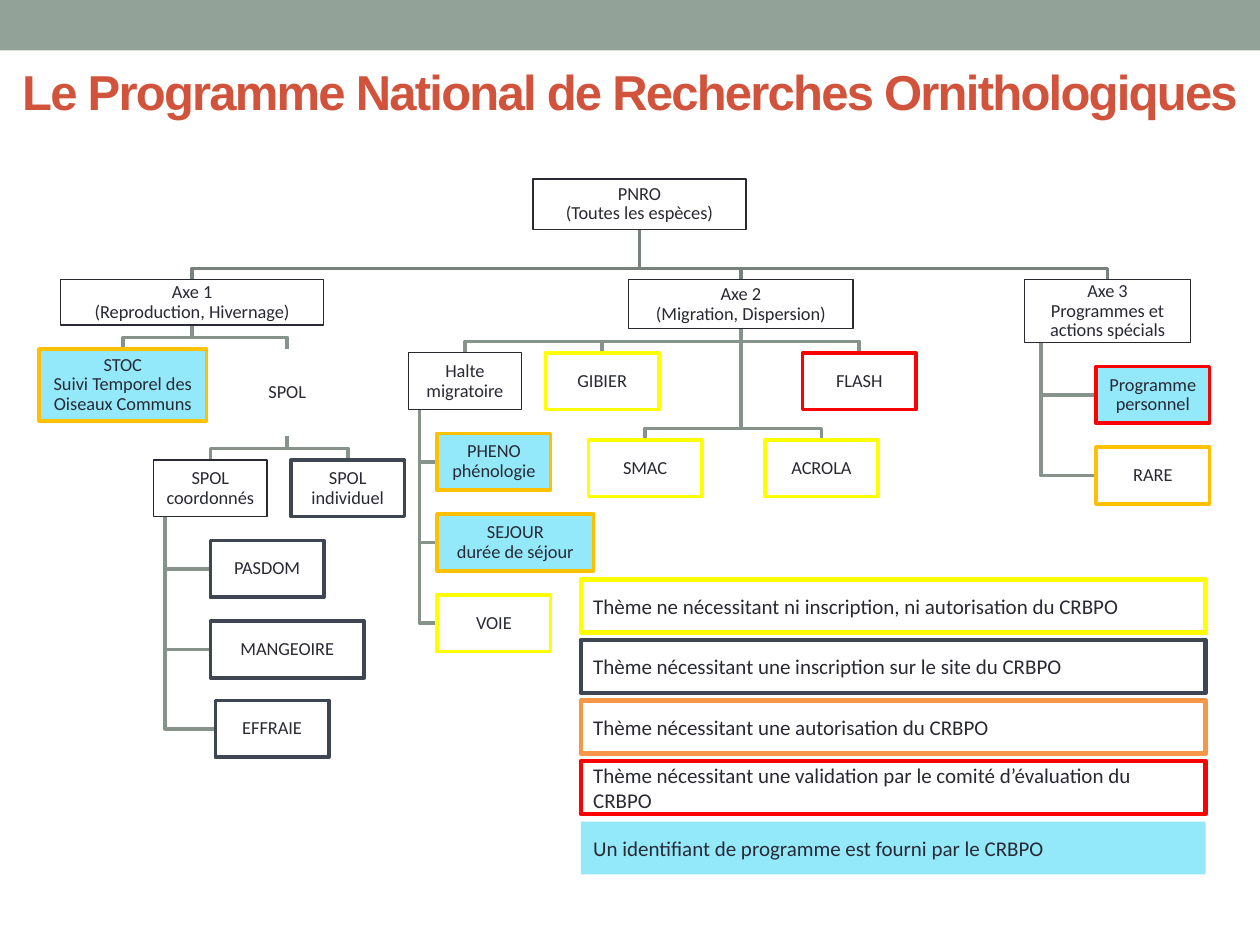
from collections import namedtuple

from lxml import etree
from pptx import Presentation
from pptx.dml.color import RGBColor
from pptx.enum.shapes import MSO_SHAPE
from pptx.enum.text import MSO_ANCHOR, PP_ALIGN
from pptx.oxml.ns import qn
from pptx.util import Inches, Pt

RECT = MSO_SHAPE.RECTANGLE
MIDDLE = MSO_ANCHOR.MIDDLE
CENTER, LEFT = PP_ALIGN.CENTER, PP_ALIGN.LEFT

SAGE = RGBColor(0x93, 0xA2, 0x99)
BRICK = RGBColor(0xD2, 0x53, 0x3C)
INK = RGBColor(0x29, 0x29, 0x34)
SLATE = RGBColor(0x3E, 0x46, 0x52)
YELLOW = RGBColor(0xFF, 0xFF, 0x00)
AMBER = RGBColor(0xFF, 0xC0, 0x00)
ORANGE = RGBColor(0xF7, 0x96, 0x46)
RED = RGBColor(0xFF, 0x00, 0x00)
CYAN = RGBColor(0x6F, 0xE2, 0xF9)
ROOT_LINK = RGBColor(0x76, 0x82, 0x7B)
LINK = RGBColor(0x85, 0x93, 0x8B)

Node = namedtuple("Node", "text x y w h line fill", defaults=(0.9, 0.45, INK, None))

# Positions in inches from the top left corner of the tree
NODES = {
    "pnro": Node("PNRO\n(Toutes les espèces)", 4.23, 0, 1.69, 0.4),
    "axe1": Node("Axe 1\n(Reproduction, Hivernage)", 0.48, 0.8, 2.09, 0.36),
    "stoc": Node("STOC\nSuivi Temporel des Oiseaux Communs", 0.31, 1.35, 1.33, 0.57,
                 AMBER, CYAN),
    "spol": Node("SPOL", 1.83, 1.35, h=0.69, line=None),
    "coordonnes": Node("SPOL coordonnés", 1.22, 2.23),
    "pasdom": Node("PASDOM", 1.67, 2.87, line=SLATE),
    "mangeoire": Node("MANGEOIRE", 1.67, 3.51, 1.22, line=SLATE),
    "effraie": Node("EFFRAIE", 1.71, 4.14, line=SLATE),
    "individuel": Node("SPOL individuel", 2.31, 2.23, line=SLATE),
    "axe2": Node("Axe 2\n(Migration, Dispersion)", 4.99, 0.8, 1.78, 0.39),
    "halte": Node("Halte migratoire", 3.24, 1.38),
    "pheno": Node("PHENO\nphénologie", 3.47, 2.02, line=AMBER, fill=CYAN),
    "sejour": Node("SEJOUR\ndurée de séjour", 3.47, 2.66, 1.24, line=AMBER, fill=CYAN),
    "voie": Node("VOIE", 3.47, 3.3, line=YELLOW),
    "gibier": Node("GIBIER", 4.33, 1.38, line=YELLOW),
    "smac": Node("SMAC", 4.67, 2.07, line=YELLOW),
    "flash": Node("FLASH", 6.37, 1.38, line=RED),
    "acrola": Node("ACROLA", 6.07, 2.07, line=YELLOW),
    "axe3": Node("Axe 3\nProgrammes et actions spécials", 8.13, 0.8, 1.32, 0.5),
    "personnel": Node("Programme personnel", 8.7, 1.49, line=RED, fill=CYAN),
    "rare": Node("RARE", 8.7, 2.13, line=AMBER),
}
DROP_LINKS = {
    "axe1": ["stoc", "spol"],
    "spol": ["coordonnes", "individuel"],
    "axe2": ["halte", "gibier", "smac", "acrola", "flash"],
    "pnro": ["axe1", "axe2", "axe3"],
}
SIDE_LINKS = {
    "coordonnes": ["pasdom", "mangeoire", "effraie"],
    "halte": ["pheno", "sejour", "voie"],
    "axe3": ["personnel", "rare"],
}
LEGEND = [
    ("Thème ne nécessitant ni inscription, ni autorisation du CRBPO", YELLOW, None),
    ("Thème nécessitant une inscription sur le site du CRBPO", SLATE, None),
    ("Thème nécessitant une autorisation du CRBPO", ORANGE, None),
    ("Thème nécessitant une validation par le comité d’évaluation du CRBPO", RED, None),
    ("Un identifiant de programme est fourni par le CRBPO", None, CYAN),
]


def add_box(slide, x, y, w, h, line=None, weight=0.75, fill=None, alpha=100):
    sp = slide.shapes.add_shape(RECT, Inches(x), Inches(y), Inches(w), Inches(h))
    sp.shadow.inherit = False
    if fill is None:
        sp.fill.background()
    else:
        sp.fill.solid()
        sp.fill.fore_color.rgb = fill
        if alpha < 100:
            color = sp.fill._xPr.find(qn("a:solidFill"))[0]
            etree.SubElement(color, qn("a:alpha")).set("val", str(alpha * 1000))
    if line is None:
        sp.line.fill.background()
    else:
        sp.line.color.rgb = line
        sp.line.width = Pt(weight)
    return sp


def write(sp, text, size, align, inset_x, inset_y):
    tf = sp.text_frame
    tf.word_wrap = True
    tf.vertical_anchor = MIDDLE
    tf.margin_left = tf.margin_right = Inches(inset_x)
    tf.margin_top = tf.margin_bottom = Inches(inset_y)
    p = tf.paragraphs[0]
    p.alignment = align
    for i, part in enumerate(text.split("\n")):
        if i:
            p.add_line_break()
        r = p.add_run()
        r.text = part
        r.font.name = "Calibri"
        r.font.size = Pt(size)
        r.font.color.rgb = INK
    return p


def add_link(slide, points, color):
    points = [(Inches(x), Inches(y)) for x, y in points]
    builder = slide.shapes.build_freeform(*points[0])
    builder.add_line_segments(points[1:], close=False)
    sp = builder.convert_to_shape()
    sp.shadow.inherit = False
    sp.fill.background()
    sp.line.color.rgb = color
    sp.line.width = Pt(2.08)


def add_header(slide, x, y, w):
    add_box(slide, x, y, w, 0.4, fill=SAGE)
    title = slide.shapes.title
    title.left, title.top = Inches(x), Inches(y + 0.3)
    title.width, title.height = Inches(w), Inches(0.85)
    tf = title.text_frame
    tf.vertical_anchor = MIDDLE
    p = tf.paragraphs[0]
    p.alignment = CENTER
    r = p.add_run()
    r.text = "Le Programme National de Recherches Ornithologiques"
    r.font.name = "Arial"
    r.font.size = Pt(28)
    r.font.bold = True
    r.font.color.rgb = BRICK
    r._r.get_or_add_rPr().set("spc", "-100")


def add_tree(slide, left, top):
    nodes = {key: n._replace(x=left + n.x, y=top + n.y) for key, n in NODES.items()}

    for parent, children in SIDE_LINKS.items():
        a = nodes[parent]
        x = a.x + a.w / 10
        for child in children:
            b = nodes[child]
            y = b.y + b.h / 2
            add_link(slide, [(x, a.y + a.h), (x, y), (b.x, y)], LINK)

    for parent, children in DROP_LINKS.items():
        a = nodes[parent]
        x1 = a.x + a.w / 2
        for child in children:
            b = nodes[child]
            x2, bus = b.x + b.w / 2, b.y - 0.09
            add_link(slide, [(x1, a.y + a.h), (x1, bus), (x2, bus), (x2, b.y)],
                     ROOT_LINK if parent == "pnro" else LINK)

    for n in nodes.values():
        weight = 0.75 if n.line == INK else 2.08
        sp = add_box(slide, n.x, n.y, n.w, n.h, n.line, weight, n.fill, 75)
        p = write(sp, n.text, 10.5, CENTER, 0.01, 0.01)
        p.line_spacing = 0.9


def add_legend(slide, x, y, w, pitch):
    for i, (text, line, fill) in enumerate(LEGEND):
        sp = add_box(slide, x, y + i * pitch, w, 0.42, line, 2.5, fill, 75)
        p = write(sp, text, 12, LEFT, 0.1, 0)
        p.space_after = Pt(10)


def main():
    prs = Presentation()
    prs.slide_width, prs.slide_height = Inches(10), Inches(7.5)
    slide = prs.slides.add_slide(prs.slide_layouts[5])
    add_header(slide, 0, 0, 10)
    add_tree(slide, 0, 1.42)
    add_legend(slide, 4.61, 4.6, 4.96, 0.48)
    prs.save("out.pptx")


if __name__ == "__main__":
    main()
